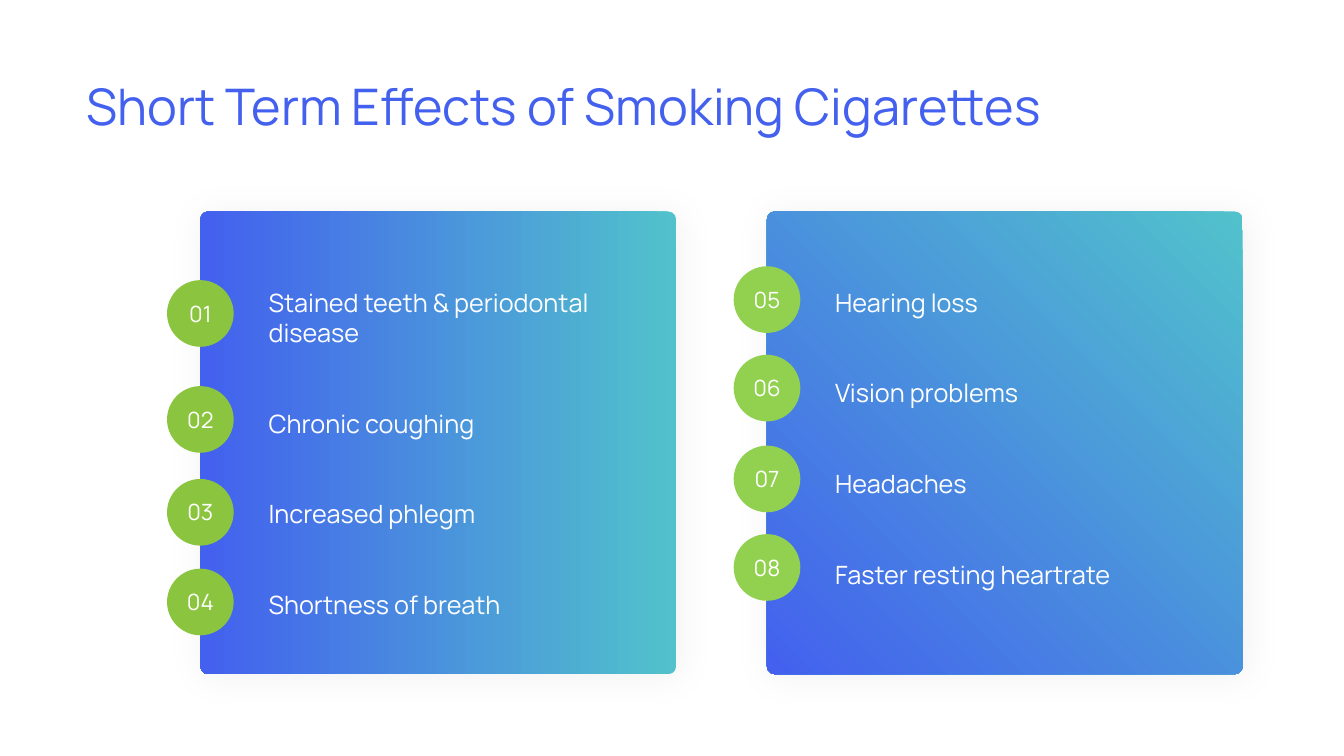
"""Build a slide listing the short term effects of smoking in two numbered cards."""
import pptx
import pptx.dml.color
import pptx.enum.shapes
import pptx.enum.text
import pptx.util
from lxml import etree

Cm, Pt = pptx.util.Cm, pptx.util.Pt
SHAPE = pptx.enum.shapes.MSO_SHAPE
ALIGN = pptx.enum.text.PP_ALIGN
NS = "http://schemas.openxmlformats.org/drawingml/2006/main"

TITLE = "Short Term Effects of Smoking Cigarettes"
CARDS = [
    {"angle": 180, "badge": "8BC53F", "size": (9.5, 10.26),
     "tops": [7.06, 9.73, 12.07, 14.33],
     "items": [("Stained teeth & periodontal", "disease"), ("Chronic coughing",),
               ("Increased phlegm",), ("Shortness of breath",)]},
    {"angle": 225, "badge": "92D050", "size": (9.02, 9.09),
     "tops": [6.71, 8.94, 11.23, 13.46],
     "items": [("Hearing loss",), ("Vision problems",),
               ("Headaches",), ("Faster resting heartrate",)]},
]
FONT, BLUE, TEAL, WHITE = "Manrope", "4361EE", "51C2CB", "FFFFFF"
LEFT, TOP, STEP, WIDTH, HEIGHT = 5.05, 5.33, 14.28, 11.99, 11.66
DOT, NUM_W, NUM_H = 1.68, 2.08, 0.94
GAP = 32.3


def rgb(code):
    return pptx.dml.color.RGBColor.from_string(code)


def add_text(slide, box, lines, size, color, align=ALIGN.LEFT):
    frame = slide.shapes.add_textbox(*map(Cm, box)).text_frame
    frame.word_wrap = True
    frame.text = "\n".join(lines)
    for para in frame.paragraphs:
        para.alignment = align
        for run in para.runs:
            run.font.name, run.font.size = FONT, Pt(size)
            run.font.color.rgb = rgb(color)
    return frame


def add_shape(slide, kind, box):
    shape = slide.shapes.add_shape(kind, *map(Cm, box))
    shape.shadow.inherit = False
    shape.line.fill.background()
    return shape


def add_card(slide, left, angle):
    card = add_shape(slide, SHAPE.ROUNDED_RECTANGLE, (left, TOP, WIDTH, HEIGHT))
    card.adjustments[0] = 0.017
    card.fill.gradient()
    card.fill.gradient_angle = angle
    for stop, place, color in zip(card.fill.gradient_stops, (0, 0.99), (TEAL, BLUE)):
        stop.position, stop.color.rgb = place, rgb(color)
    effect = card.element.spPr.find(f"{{{NS}}}effectLst")
    shade = etree.SubElement(effect, f"{{{NS}}}outerShdw", blurRad=str(Pt(27)),
                             dist=str(Pt(3)), dir="2700000", algn="tl", rotWithShape="0")
    tint = etree.SubElement(shade, f"{{{NS}}}srgbClr", val="000000")
    etree.SubElement(tint, f"{{{NS}}}alpha", val="6000")


def add_list(slide, left, card):
    lines = [line for item in card["items"] for line in item]
    frame = add_text(slide, (left, 6.73, *card["size"]), lines, 18, WHITE)
    heads = [item[0] for item in card["items"]]
    for index, para in enumerate(frame.paragraphs):
        if para.text in heads:
            para.line_spacing = 1.5
            para.space_before = Pt(GAP if index else 0)


def add_badge(slide, mid, top, color, number):
    dot = add_shape(slide, SHAPE.OVAL, (mid - DOT / 2, top, DOT, DOT))
    dot.fill.solid()
    dot.fill.fore_color.rgb = rgb(color)
    box = (mid - NUM_W / 2, top + (DOT - NUM_H) / 2, NUM_W, NUM_H)
    add_text(slide, box, [f"{number:02}"], 16, WHITE, ALIGN.CENTER)


def main():
    deck = pptx.Presentation()
    deck.slide_width, deck.slide_height = Cm(33.87), Cm(19.05)
    slide = deck.slides.add_slide(deck.slide_layouts[6])
    add_text(slide, (1.93, 1.78, 27.89, 1.8), [TITLE], 36, BLUE)
    number = 0
    for index, card in enumerate(CARDS):
        left = LEFT + index * STEP
        add_card(slide, left, card["angle"])
        add_list(slide, left + 1.47, card)
        for top in card["tops"]:
            number += 1
            add_badge(slide, left, top, card["badge"], number)
    deck.save("out.pptx")


if __name__ == "__main__":
    main()
